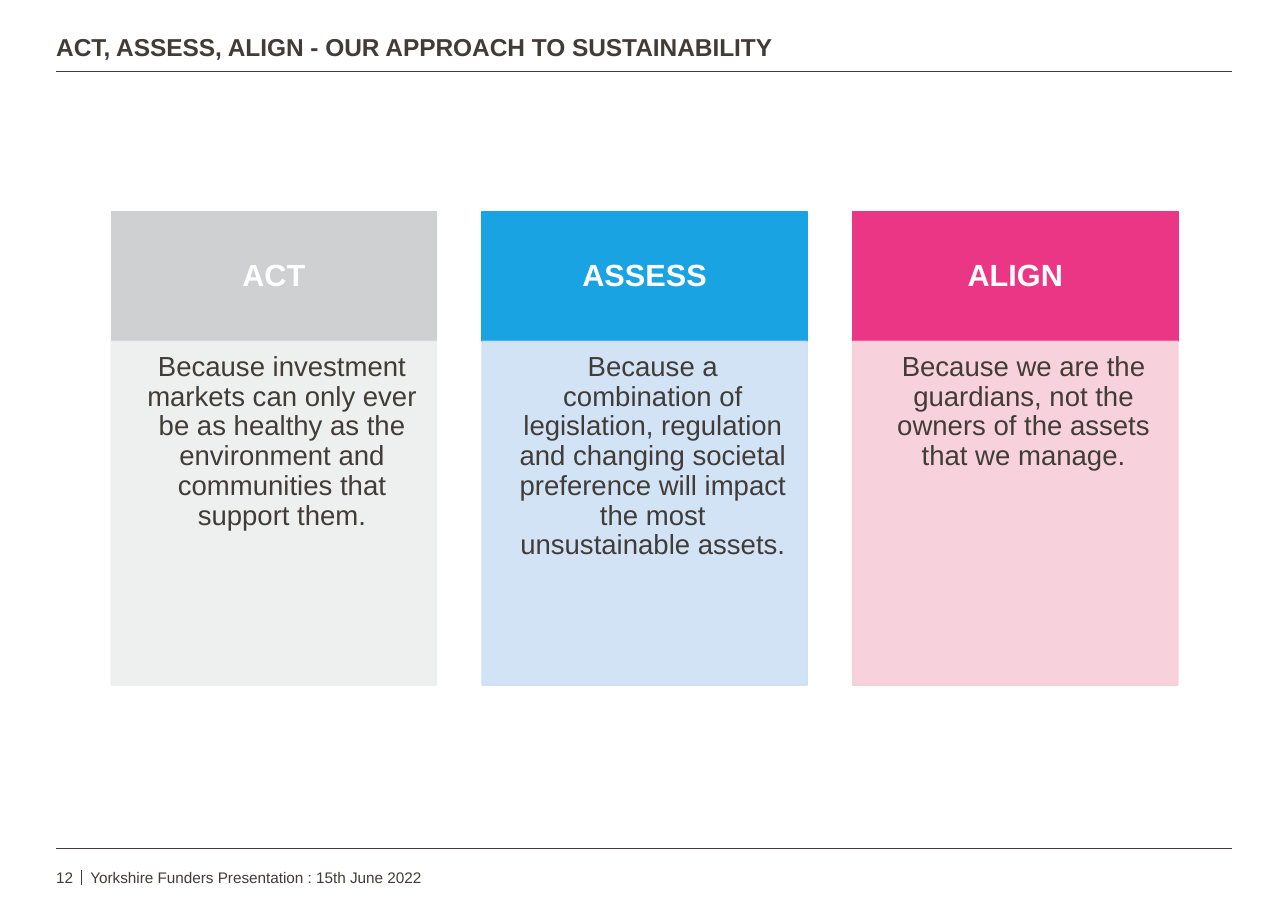
from lxml.etree import SubElement
from pptx import Presentation
from pptx.dml.color import RGBColor
from pptx.enum.shapes import MSO_CONNECTOR, MSO_SHAPE
from pptx.enum.text import MSO_ANCHOR as ANCHOR, PP_ALIGN as ALIGN
from pptx.oxml.ns import qn
from pptx.util import Inches, Pt

INK = RGBColor(0x41, 0x3C, 0x38)
WHITE = RGBColor(0xFF, 0xFF, 0xFF)
GREY, PALE_GREY = RGBColor(0xCE, 0xD0, 0xD1), RGBColor(0xED, 0xEE, 0xEE)
BLUE, PALE_BLUE = RGBColor(0x1A, 0xA3, 0xE3), RGBColor(0xCD, 0xE0, 0xF4)
PINK, PALE_PINK = RGBColor(0xEB, 0x36, 0x86), RGBColor(0xF7, 0xCE, 0xD9)

LEFT, RIGHT = 0.51, 11.18
HEAD_RULE, FOOT_RULE = 0.65, 7.7
FIRST_COLUMN, COLUMN_STEP, COLUMN_WIDTH = 1.01, 3.365, 2.95
HEADER_TOP, HEADER_HEIGHT, BODY_HEIGHT = 1.92, 1.18, 3.12


def write(shape, text, size, color, bold, align, anchor, insets):
    """Fill a shape with one formatted paragraph; insets run left, top, right, bottom."""
    frame = shape.text_frame
    frame.word_wrap = True
    frame.vertical_anchor = anchor
    (frame.margin_left, frame.margin_top,
     frame.margin_right, frame.margin_bottom) = map(Inches, insets)
    para = frame.paragraphs[0]
    para.text = text
    para.alignment = align
    font = para.font
    font.name, font.size, font.bold = "Arial", Pt(size), bold
    font.color.rgb = color
    return para


def add_panel(left, top, height, color):
    panel = page.shapes.add_shape(MSO_SHAPE.RECTANGLE, Inches(left), Inches(top),
                                  Inches(COLUMN_WIDTH), Inches(height))
    panel.shadow.inherit = False
    panel.fill.solid()
    panel.fill.fore_color.rgb = color
    panel.line.color.rgb = color
    panel.line.width = Pt(1)
    return panel


deck = Presentation()
deck.slide_width, deck.slide_height = Inches(11.69), Inches(8.27)
page = deck.slides.add_slide(deck.slide_layouts[5])

title = page.shapes.title
title.left, title.top = Inches(LEFT), Inches(0.09)
title.width, title.height = Inches(9.58), Inches(0.47)
heading = write(title, "ACT, ASSESS, ALIGN - OUR APPROACH TO SUSTAINABILITY",
                16, INK, True, ALIGN.LEFT, ANCHOR.BOTTOM, (0, 0, 0, 0))
heading.line_spacing = 0.9

rules = [
    (LEFT, HEAD_RULE, RIGHT, HEAD_RULE, 0.25),
    (LEFT, FOOT_RULE, RIGHT, FOOT_RULE, 0.25),
    (0.74, 7.9, 0.74, 8.03, 0.5),
]
for *ends, weight in rules:
    rule = page.shapes.add_connector(MSO_CONNECTOR.STRAIGHT, *map(Inches, ends))
    rule.line.color.rgb = INK
    rule.line.width = Pt(weight)
    SubElement(rule._element.spPr, qn("a:effectLst"))

columns = [
    ("ACT", GREY, PALE_GREY,
     "Because investment markets can only ever be as healthy as the environment "
     "and communities that support them."),
    ("ASSESS", BLUE, PALE_BLUE,
     "Because a combination of legislation, regulation and changing societal "
     "preference will impact the most unsustainable assets."),
    ("ALIGN", PINK, PALE_PINK,
     "Because we are the guardians, not the owners of the assets that we manage."),
]
for index, (name, color, pale, reason) in enumerate(columns):
    left = FIRST_COLUMN + index * COLUMN_STEP
    header = add_panel(left, HEADER_TOP, HEADER_HEIGHT, color)
    para = write(header, name, 20, WHITE, True, ALIGN.CENTER, ANCHOR.MIDDLE,
                 (0.16, 0.09, 0.16, 0.09))
    para.line_spacing = 0.9

    body = add_panel(left, HEADER_TOP + HEADER_HEIGHT, BODY_HEIGHT, pale)
    for tint in body._element.spPr.iter(qn("a:srgbClr")):
        SubElement(tint, qn("a:alpha"), val="90000")
    para = write(body, reason, 18, INK, False, ALIGN.CENTER, ANCHOR.TOP,
                 (0.1, 0.1, 0.14, 0.16))
    para.line_spacing = 0.9
    para._p.get_or_add_pPr().set("marL", str(Inches(0.19)))

footers = [
    (LEFT, 0.21, "12"),
    (0.82, 7.45, "Yorkshire Funders Presentation : 15th June 2022"),
]
for left, width, text in footers:
    box = page.shapes.add_textbox(Inches(left), Inches(FOOT_RULE), Inches(width), Inches(0.53))
    write(box, text, 10, INK, False, ALIGN.LEFT, ANCHOR.MIDDLE, (0, 0, 0, 0))

deck.save("out.pptx")
